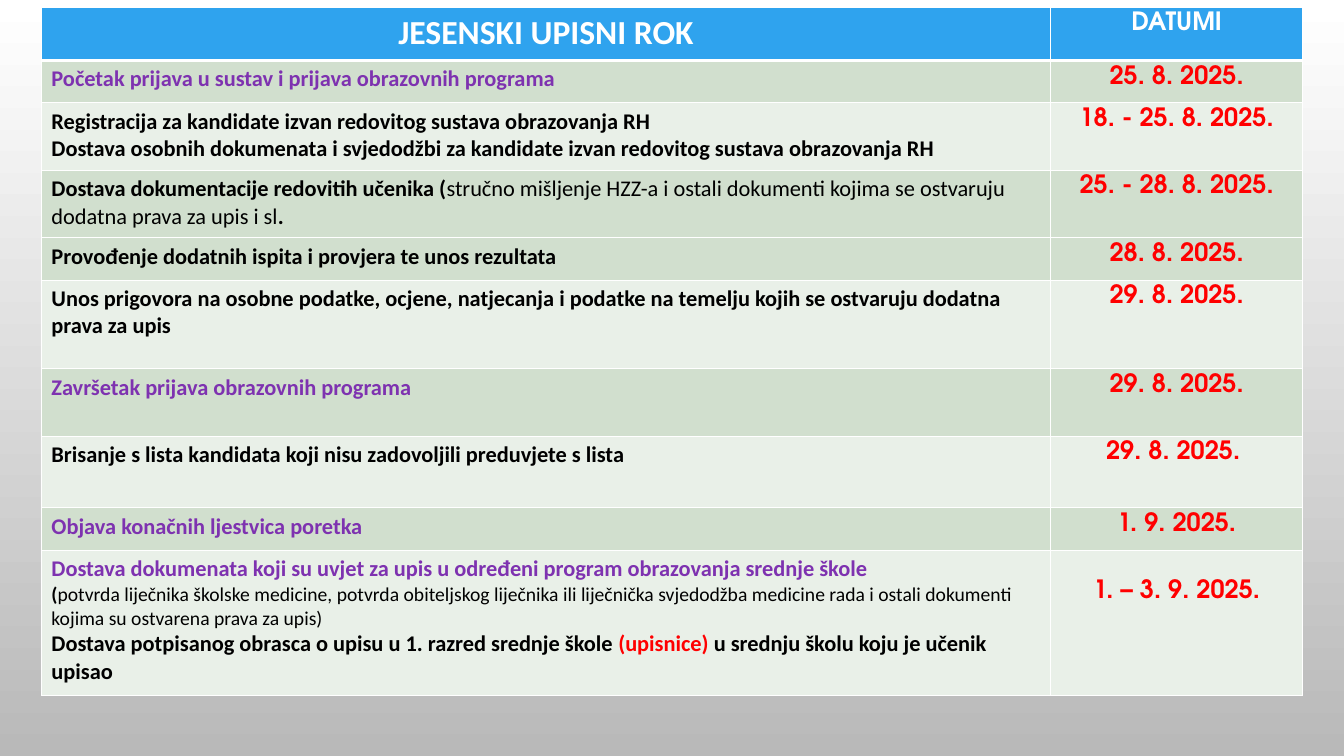
from lxml.etree import SubElement
from pptx import Presentation
from pptx.dml.color import RGBColor
from pptx.enum.text import PP_ALIGN as Align
from pptx.oxml import parse_xml
from pptx.oxml.ns import nsdecls
from pptx.util import Inches, Pt

WHITE = RGBColor(0xFF, 0xFF, 0xFF)
GREY = RGBColor(0xB9, 0xB9, 0xB9)
BLUE = RGBColor(0x2F, 0xA3, 0xEE)
SAGE = RGBColor(0xD1, 0xDF, 0xCE)
MINT = RGBColor(0xE9, 0xF0, 0xE8)
PURPLE = RGBColor(0x7E, 0x32, 0xB0)
BLACK = RGBColor(0, 0, 0)
RED = RGBColor(0xFF, 0, 0)

# Each row: height in grid rows, fill, paragraphs of (text, colour, size, bold), date
SCHEDULE = [
    (4.2, SAGE, [[("Početak prijava u sustav i prijava obrazovnih programa", PURPLE, 16, True)]],
     "25. 8. 2025."),
    (6.7, MINT, [
        [("Registracija za kandidate izvan redovitog sustava obrazovanja RH", BLACK, 16, True)],
        [("Dostava osobnih dokumenata i svjedodžbi za kandidate izvan redovitog sustava "
          "obrazovanja RH", BLACK, 16, True)]],
     "18. - 25. 8. 2025."),
    (6.7, SAGE, [[
        ("Dostava dokumentacije redovitih učenika (", BLACK, 16, True),
        ("stručno mišljenje HZZ-a i ostali dokumenti kojima se ostvaruju dodatna prava "
         "za upis i sl", BLACK, 16, False),
        (".", BLACK, 16, True)]],
     "25. - 28. 8. 2025."),
    (4.2, SAGE, [[("Provođenje dodatnih ispita i provjera te unos rezultata", BLACK, 16, True)]],
     "28. 8. 2025."),
    (8.8, MINT, [[("Unos prigovora na osobne podatke, ocjene, natjecanja i podatke na temelju "
                   "kojih se ostvaruju dodatna prava za upis", BLACK, 16, True)]],
     "29. 8. 2025."),
    (6.7, SAGE, [[("Završetak prijava obrazovnih programa", PURPLE, 16, True)]],
     "29. 8. 2025."),
    (7.1, MINT, [[("Brisanje s lista kandidata koji nisu zadovoljili preduvjete s lista",
                   BLACK, 16, True)]],
     "29. 8. 2025. "),
    (4.2, SAGE, [[("Objava konačnih ljestvica poretka", PURPLE, 16, True)]],
     "1. 9. 2025."),
    (14.4, MINT, [
        [("Dostava dokumenata koji su uvjet za upis u određeni program obrazovanja srednje škole",
          PURPLE, 16, True)],
        [("(", BLACK, 14, True),
         ("potvrda liječnika školske medicine, potvrda obiteljskog liječnika ili liječnička "
          "svjedodžba medicine rada i ostali dokumenti kojima su ostvarena prava za upis)",
          BLACK, 14, False)],
        [("Dostava potpisanog obrasca o upisu u 1. razred srednje škole ", BLACK, 16, True),
         ("(upisnice) ", RED, 16, True),
         ("u srednju školu koju je učenik upisao", BLACK, 16, True)]],
     "1. – 3. 9. 2025."),
]
HEADER_HEIGHT = 5.3


class SlideBuilder:
    """Holds the style and the current slide; lengths are in grid units."""
    TEXT_FONT = "Calibri"
    DATE_FONT = "TeX Gyre Adventor"
    COLUMNS, ROWS = 100, 75

    def __init__(self, presentation):
        self.column = presentation.slide_width / self.COLUMNS
        self.row = presentation.slide_height / self.ROWS
        self.slide = presentation.slides.add_slide(presentation.slide_layouts[6])

    def background(self, top, bottom):
        fill = self.slide.background.fill
        fill.gradient()
        fill.gradient_angle = 270
        for stop, color in zip(fill.gradient_stops, (top, bottom)):
            stop.color.rgb = color

    def table(self, left, top, widths, heights):
        frame = self.slide.shapes.add_table(
            len(heights), len(widths), int(left * self.column), int(top * self.row),
            int(sum(widths) * self.column), int(sum(heights) * self.row))
        table = frame.table
        table.first_row = table.horz_banding = False
        for column, width in zip(table.columns, widths):
            column.width = int(width * self.column)
        for row, height in zip(table.rows, heights):
            row.height = int(height * self.row)
        return table

    def cell(self, cell, fill, paragraphs, font, align=Align.LEFT, top_line=1, bottom_line=1):
        cell.fill.solid()
        cell.fill.fore_color.rgb = fill
        self.borders(cell, {"L": 1, "R": 1, "T": top_line, "B": bottom_line})
        text_frame = cell.text_frame
        for index, runs in enumerate(paragraphs):
            paragraph = text_frame.add_paragraph() if index else text_frame.paragraphs[0]
            paragraph.alignment = align
            for text, color, size, bold in runs:
                run = paragraph.add_run()
                run.text = text
                run.font.name = font
                run.font.size = Pt(size)
                run.font.bold = bold
                run.font.color.rgb = color

    def borders(self, cell, widths):
        properties = cell._tc.get_or_add_tcPr()
        for index, (side, points) in enumerate(widths.items()):
            line = parse_xml(f'<a:ln{side} {nsdecls("a")} w="{Pt(points)}"><a:solidFill>'
                             f'<a:srgbClr val="{WHITE}"/></a:solidFill></a:ln{side}>')
            properties.insert(index, line)


def main():
    presentation = Presentation()
    presentation.slide_width, presentation.slide_height = Inches(13.33), Inches(7.5)
    builder = SlideBuilder(presentation)
    builder.background(WHITE, GREY)

    heights = [HEADER_HEIGHT] + [height for height, *_ in SCHEDULE]
    table = builder.table(3.08, 0.7, (75.09, 18.76), heights)

    # Header
    headings = [("JESENSKI UPISNI ROK", 24, builder.TEXT_FONT),
                ("DATUMI", 18, builder.DATE_FONT)]
    for column, (heading, size, font) in enumerate(headings):
        builder.cell(table.cell(0, column), BLUE, [[(heading, WHITE, size, True)]], font,
                     Align.CENTER, bottom_line=3)

    # Activities and their dates
    for row, (_, fill, activity, date) in enumerate(SCHEDULE, start=1):
        top_line = 3 if row == 1 else 1
        builder.cell(table.cell(row, 0), fill, activity, builder.TEXT_FONT, top_line=top_line)
        builder.cell(table.cell(row, 1), fill, [[(date, RED, 18, True)]], builder.DATE_FONT,
                     Align.CENTER, top_line=top_line)

    # The last date sits one line lower
    table.cell(len(SCHEDULE), 1).margin_top = int(2.9 * builder.row)

    presentation.save("out.pptx")


if __name__ == "__main__":
    main()
